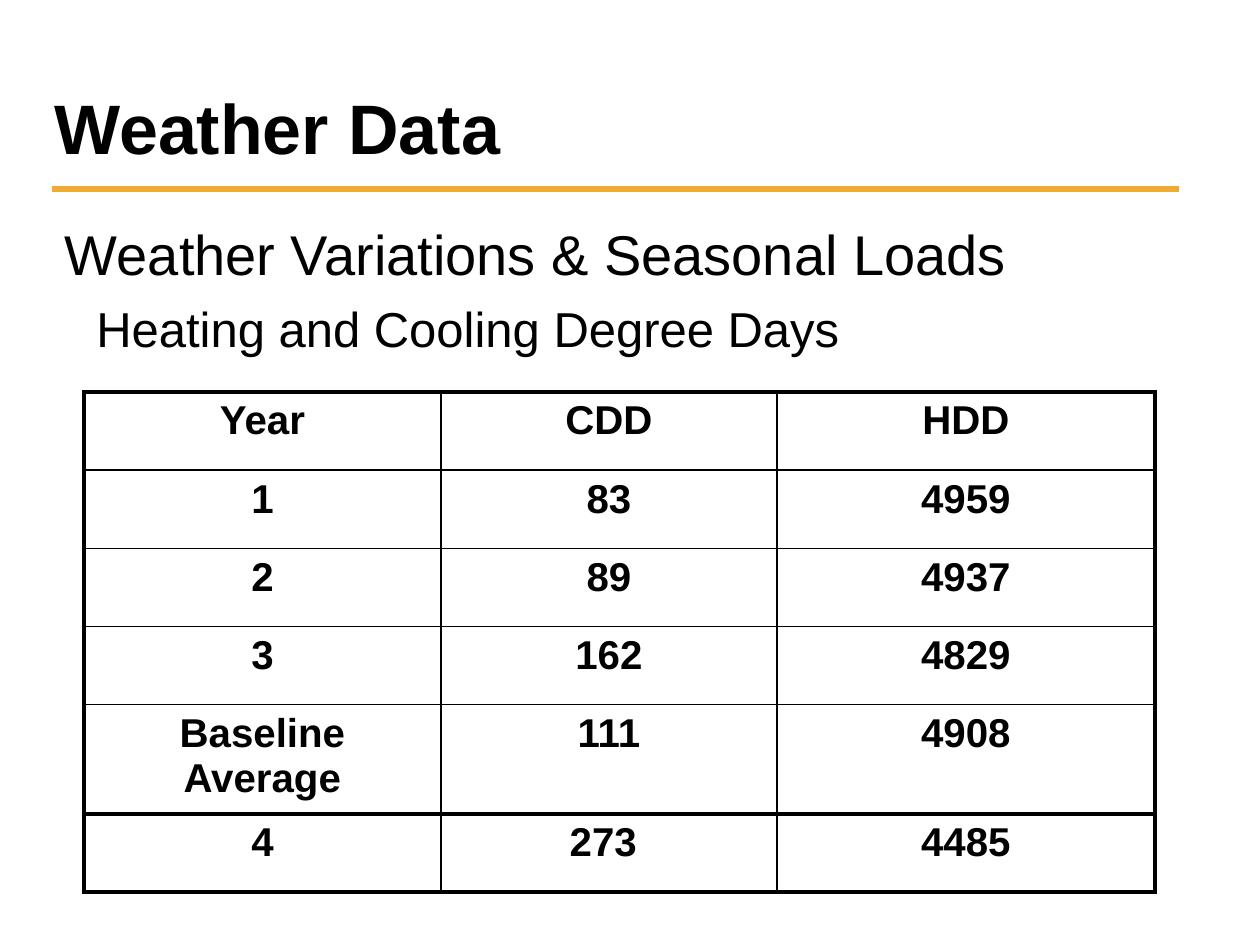
from lxml.etree import SubElement
from pptx import Presentation
from pptx.dml.color import RGBColor
from pptx.enum.shapes import MSO_CONNECTOR as Connector
from pptx.enum.text import MSO_ANCHOR as Anchor, PP_ALIGN as Align
from pptx.oxml.ns import qn
from pptx.util import Pt

TITLE = "Weather Data"
BODY = [
    ("Weather Variations & Seasonal Loads", 32, 0, 0),
    ("Heating and Cooling Degree Days", 28, 18, 7),
]
DEGREE_DAYS = [
    ("Year", "CDD", "HDD"),
    ("1", "83", "4959"),
    ("2", "89", "4937"),
    ("3", "162", "4829"),
    ("Baseline Average", "111", "4908"),
    ("4", "273 ", "4485"),
]
COLUMN_WIDTHS = [204, 192, 216]
ROW_HEIGHTS = [44.7, 44.7, 44.7, 44.7, 60.5, 44.7]
COLUMN_RULES = [2.25, 1, 1, 2.25]
ROW_RULES = [2.25, 1, 1, 1, 1, 3, 2.25]
BLACK, GOLD = "000000", "EFAB31"


def color(value):
    return RGBColor.from_string(value)


def style(paragraph, size, bold=False):
    font = paragraph.font
    font.name, font.size, font.bold = "Arial", Pt(size), bold
    font.color.rgb = color(BLACK)


def add_text_frame(slide, left, top, width, height, inset_top):
    frame = slide.shapes.add_textbox(Pt(left), Pt(top), Pt(width), Pt(height)).text_frame
    frame.word_wrap = True
    frame.margin_top = Pt(inset_top)
    return frame


def add_border(cell, side, width):
    line = SubElement(cell._tc.get_or_add_tcPr(), qn(f"a:ln{side}"), w=str(Pt(width)))
    fill = SubElement(line, qn("a:solidFill"))
    SubElement(fill, qn("a:srgbClr"), val=BLACK)


def add_degree_days(slide):
    table = slide.shapes.add_table(
        len(DEGREE_DAYS), len(COLUMN_WIDTHS), Pt(48), Pt(224),
        Pt(sum(COLUMN_WIDTHS)), Pt(sum(ROW_HEIGHTS))).table
    table.first_row = table.horz_banding = False
    for column, width in zip(table.columns, COLUMN_WIDTHS):
        column.width = Pt(width)
    for r, values in enumerate(DEGREE_DAYS):
        table.rows[r].height = Pt(ROW_HEIGHTS[r])
        for c, value in enumerate(values):
            cell = table.cell(r, c)
            cell.text = value
            paragraph = cell.text_frame.paragraphs[0]
            paragraph.alignment = Align.CENTER
            style(paragraph, 23, True)
            rules = COLUMN_RULES[c:c + 2] + ROW_RULES[r:r + 2]
            for side, width in zip("LRTB", rules):
                add_border(cell, side, width)
            cell.fill.background()


def main():
    deck = Presentation()
    deck.slide_width, deck.slide_height = Pt(720), Pt(540)
    slide = deck.slides.add_slide(deck.slide_layouts[6])

    divider = slide.shapes.add_connector(
        Connector.STRAIGHT, Pt(30), Pt(108), Pt(674), Pt(108))
    divider.line.color.rgb = color(GOLD)
    divider.line.width = Pt(4)
    SubElement(divider._element.spPr, qn("a:effectLst"))

    body = add_text_frame(slide, 30, 118, 657, 398, 7.2)
    for i, (text, size, indent, space) in enumerate(BODY):
        paragraph = body.add_paragraph() if i else body.paragraphs[0]
        paragraph.text = text
        paragraph.space_before = Pt(space)
        if indent:
            paragraph.level = 1
            properties = paragraph._p.get_or_add_pPr()
            properties.set("marL", str(Pt(2 * indent)))
            properties.set("indent", str(Pt(-indent)))
        style(paragraph, size)

    title = add_text_frame(slide, 24, 30, 522, 78, 9.6)
    title.vertical_anchor = Anchor.MIDDLE
    title.text = TITLE
    style(title.paragraphs[0], 40, True)

    add_degree_days(slide)
    deck.save("out.pptx")


if __name__ == "__main__":
    main()
